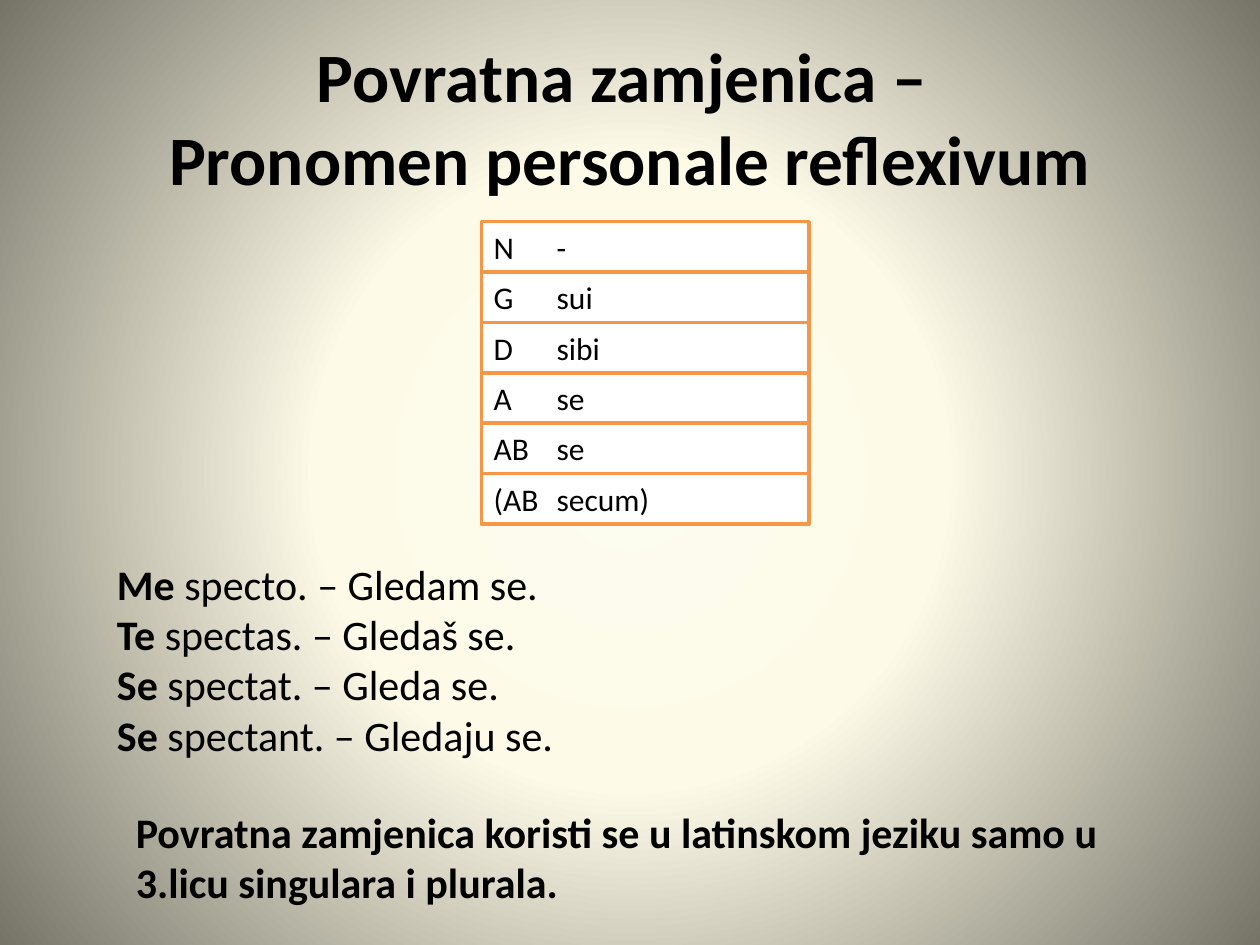
"""Build a slide on the Latin reflexive pronoun."""
import dataclasses

import pptx
import pptx.dml.color
import pptx.enum.shapes
import pptx.enum.text
import pptx.oxml
import pptx.oxml.ns
import pptx.util

Inches = pptx.util.Inches


@dataclasses.dataclass(frozen=True)
class Theme:
    """Colours and type sizes of the slide."""

    font: str = "Calibri"
    ink: str = "000000"
    paper: str = "FFFFFF"
    accent: str = "F79646"
    glow: tuple = ((0, "FCFCEF"), (40, "FDFAE8"), (100, "767467"))
    title_size: float = 39.6
    body_size: float = 24
    case_size: float = 18
    border: float = 2


class SlideBuilder:
    """Draw styled elements on the current slide."""

    def __init__(self, slide, theme):
        self.slide = slide
        self.theme = theme

    def color(self, value):
        """Return an RGB colour from its hex value."""
        return pptx.dml.color.RGBColor.from_string(value)

    def background(self):
        """Fill the background with a centred circular gradient."""
        stops = "".join(
            f'<a:gs pos="{position * 1000}"><a:srgbClr val="{color}"/></a:gs>'
            for position, color in self.theme.glow
        )
        background = pptx.oxml.parse_xml(
            f'<p:bg {pptx.oxml.ns.nsdecls("p", "a")}><p:bgPr><a:gradFill rotWithShape="1">'
            f'<a:gsLst>{stops}</a:gsLst><a:path path="circle">'
            '<a:fillToRect l="50000" t="50000" r="50000" b="50000"/></a:path>'
            "</a:gradFill><a:effectLst/></p:bgPr></p:bg>"
        )
        self.slide.element.cSld.insert(0, background)

    def style(self, paragraph, size, bold=None, align=pptx.enum.text.PP_ALIGN.LEFT):
        """Apply the theme font to a paragraph."""
        paragraph.alignment = align
        paragraph.font.name = self.theme.font
        paragraph.font.size = pptx.util.Pt(size)
        paragraph.font.bold = bold
        paragraph.font.color.rgb = self.color(self.theme.ink)

    def text_frame(self, left, top, width, height):
        """Add a wrapping text box and return its frame."""
        shape = self.slide.shapes.add_textbox(
            Inches(left), Inches(top), Inches(width), Inches(height)
        )
        shape.text_frame.word_wrap = True
        return shape.text_frame

    def title(self, text, *box):
        """Add the centred heading."""
        frame = self.text_frame(*box)
        frame.vertical_anchor = pptx.enum.text.MSO_ANCHOR.MIDDLE
        paragraph = frame.paragraphs[0]
        paragraph.text = text
        self.style(paragraph, self.theme.title_size, True, pptx.enum.text.PP_ALIGN.CENTER)

    def note(self, text, *box):
        """Add a bold remark."""
        paragraph = self.text_frame(*box).paragraphs[0]
        paragraph.text = text
        self.style(paragraph, self.theme.body_size, True)

    def examples(self, sentences, *box):
        """Add one line per sentence with its pronoun in bold."""
        frame = self.text_frame(*box)
        for index, (pronoun, rest) in enumerate(sentences):
            paragraph = frame.add_paragraph() if index else frame.paragraphs[0]
            self.style(paragraph, self.theme.body_size)
            run = paragraph.add_run()
            run.text = pronoun
            run.font.bold = True
            paragraph.add_run().text = rest

    def case_box(self, case, form, left, top, width, height):
        """Add a bordered box with a case and its pronoun form."""
        shape = self.slide.shapes.add_shape(
            pptx.enum.shapes.MSO_SHAPE.RECTANGLE,
            Inches(left), Inches(top), Inches(width), Inches(height),
        )
        shape.shadow.inherit = False
        shape.fill.solid()
        shape.fill.fore_color.rgb = self.color(self.theme.paper)
        shape.line.color.rgb = self.color(self.theme.accent)
        shape.line.width = pptx.util.Pt(self.theme.border)
        frame = shape.text_frame
        frame.word_wrap = True
        frame.vertical_anchor = pptx.enum.text.MSO_ANCHOR.TOP
        paragraph = frame.paragraphs[0]
        paragraph.text = f"{case}\t{form}"
        self.style(paragraph, self.theme.case_size)


def main():
    """Build and save the presentation."""
    presentation = pptx.Presentation()
    presentation.slide_width = Inches(10)
    presentation.slide_height = Inches(7.5)
    slide = presentation.slides.add_slide(presentation.slide_layouts[6])
    builder = SlideBuilder(slide, Theme())
    builder.background()
    builder.title(
        "Povratna zamjenica – \vPronomen personale reflexivum", 0.5, 0.3, 9, 1.25
    )
    declension = (
        ("N", "-"), ("G", "sui"), ("D", "sibi"),
        ("A", "se"), ("AB", "se"), ("(AB", "secum)"),
    )
    row_height = 0.4
    for row, (case, form) in enumerate(declension):
        builder.case_box(case, form, 3.82, 1.76 + row * row_height, 2.6, row_height)
    sentences = (
        ("Me", " specto. – Gledam se."),
        ("Te", " spectas. – Gledaš se."),
        ("Se", " spectat. – Gleda se."),
        ("Se", " spectant. – Gledaju se."),
    )
    builder.examples(sentences, 0.83, 4.38, 8.19, 1.72)
    builder.note(
        "Povratna zamjenica koristi se u latinskom jeziku samo u "
        "3.licu singulara i plurala.",
        0.98, 6.35, 8.5, 0.91,
    )
    presentation.save("out.pptx")


if __name__ == "__main__":
    main()
